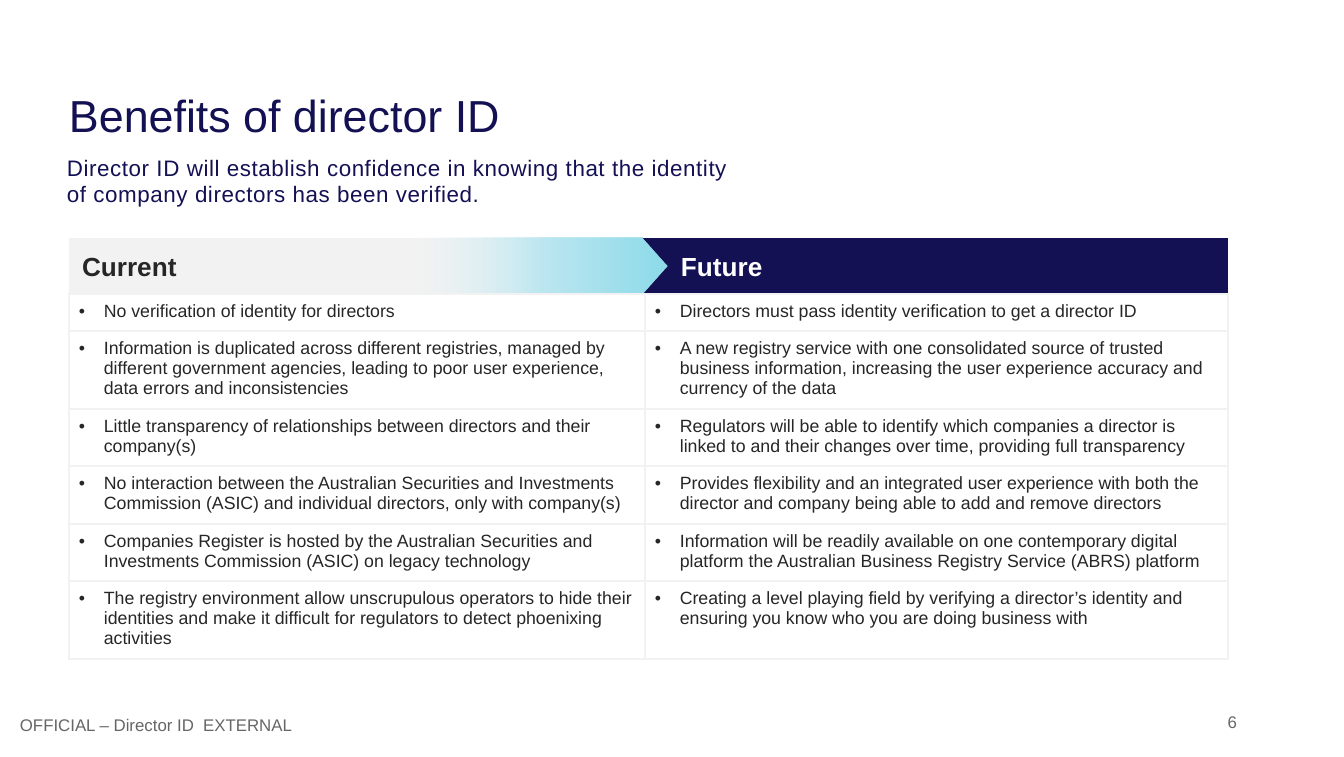
from lxml.etree import SubElement
from pptx import Presentation
from pptx.dml.color import RGBColor
from pptx.enum.shapes import MSO_SHAPE as Geo
from pptx.enum.text import MSO_ANCHOR as Anchor, PP_ALIGN as Align
from pptx.oxml import parse_xml
from pptx.oxml.ns import nsdecls, qn
from pptx.util import Emu, Inches, Pt

SCALE = 914400 / 134.4
FONT = "Arial"
HEX = {"navy": "131054", "ink": "262626", "grey": "666666", "pale": "F2F2F2",
       "white": "FFFFFF", "aqua": "8EDBEA", "sky": "BCE7F0", "mist": "DEF2F7"}

ROWS = [
    (37, "No verification of identity for directors",
     "Directors must pass identity verification to get a director ID"),
    (78, "Information is duplicated across different registries, managed by different "
         "government agencies, leading to poor user experience, data errors and inconsistencies",
     "A new registry service with one consolidated source of trusted business information, "
     "increasing the user experience accuracy and currency of the data"),
    (57, "Little transparency of relationships between directors and their company(s)",
     "Regulators will be able to identify which companies a director is linked to and "
     "their changes over time, providing full transparency"),
    (58, "No interaction between the Australian Securities and Investments Commission (ASIC) "
         "and individual directors, only with company(s)",
     "Provides flexibility and an integrated user experience with both the director and "
     "company being able to add and remove directors"),
    (57, "Companies Register is hosted by the Australian Securities and Investments "
         "Commission (ASIC) on legacy technology",
     "Information will be readily available on one contemporary digital platform the "
     "Australian Business Registry Service (ABRS) platform"),
    (78, "The registry environment allow unscrupulous operators to hide their identities and "
         "make it difficult for regulators to detect phoenixing activities",
     "Creating a level playing field by verifying a director’s identity and ensuring you "
     "know who you are doing business with"),
]


def px(n):
    return Emu(round(n * SCALE))


def tint(name):
    return RGBColor.from_string(HEX[name])


def write(para, text, size, color, bold=False, gap=0):
    """Add one run; gap is letter spacing in hundredths of a point."""
    run = para.add_run()
    run.text = text
    font = run.font
    font.name, font.size, font.bold = FONT, Pt(size), bold
    font.color.rgb = tint(color)
    if gap:
        font._element.set("spc", str(gap))


def pad(box, left=0, top=0, right=0, bottom=0):
    """Set the insets of a text frame or a table cell."""
    box.margin_left, box.margin_top = px(left), px(top)
    box.margin_right, box.margin_bottom = px(right), px(bottom)


def label(slide, x, y, w, h):
    """Add an empty, wrapped text box and return its first paragraph."""
    frame = slide.shapes.add_textbox(px(x), px(y), px(w), px(h)).text_frame
    frame.word_wrap = True
    frame.vertical_anchor = Anchor.MIDDLE
    pad(frame)
    return frame.paragraphs[0]


def heading(slide, x, y, w, h):
    title = slide.shapes.title
    title.left, title.top, title.width, title.height = px(x), px(y), px(w), px(h)
    frame = title.text_frame
    frame.vertical_anchor = Anchor.TOP
    pad(frame)
    para = frame.paragraphs[0]
    para.alignment = Align.LEFT
    para.line_spacing = Pt(30)
    para.space_before = Pt(0)
    write(para, "Benefits of director ID", 24, "navy")
    lead = label(slide, x - 2, y + 72, 676, 47)
    write(lead, "Director ID will establish confidence in knowing that the identity "
                "of company directors has been verified.", 12, "navy", gap=30)


def band(slide, geo, x, y, w, h, fill=None):
    shape = slide.shapes.add_shape(geo, px(x), px(y), px(w), px(h))
    shape.shadow.inherit = False
    shape.line.fill.background()
    if fill:
        shape.fill.solid()
        shape.fill.fore_color.rgb = tint(fill)
    return shape


def caption(shape, text, color, inset):
    frame = shape.text_frame
    frame.vertical_anchor = Anchor.MIDDLE
    pad(frame, left=inset)
    para = frame.paragraphs[0]
    para.alignment = Align.LEFT
    write(para, text, 14, color, bold=True)


def fade(shape):
    """Fill from aqua at the right to clear at the left."""
    stops = "".join(
        f'<a:gs pos="{pos}"><a:srgbClr val="{HEX[name]}">'
        f'<a:alpha val="{alpha}"/></a:srgbClr></a:gs>'
        for pos, name, alpha in ((1000, "aqua", 100000), (50000, "sky", 100000),
                                 (100000, "mist", 0)))
    fill = parse_xml(f'<a:gradFill {nsdecls("a")} rotWithShape="1"><a:gsLst>{stops}</a:gsLst>'
                     '<a:lin ang="10800000" scaled="0"/></a:gradFill>')
    shape._element.spPr.find(qn("a:prstGeom")).addnext(fill)


def header(slide, x, y, w, h):
    tip = x + 598
    future = band(slide, Geo.RECTANGLE, x + 570, y, w - 570, h, "navy")
    caption(future, "Future", "white", 42)
    now = band(slide, Geo.PENTAGON, x, y, tip - x, h, "pale")
    caption(now, "Current", "ink", 13)
    glow = band(slide, Geo.PENTAGON, tip - 247, y, 247, h)
    for arrow in (now, glow):
        arrow.adjustments[0] = 0.457
    fade(glow)


def border(cell):
    props = cell._tc.get_or_add_tcPr()
    for spot, side in enumerate("LRTB"):
        props.insert(spot, parse_xml(
            f'<a:ln{side} {nsdecls("a")} w="12700"><a:solidFill>'
            f'<a:srgbClr val="{HEX["pale"]}"/></a:solidFill></a:ln{side}>'))


def bullet(para):
    props = para._p.get_or_add_pPr()
    props.set("marL", str(px(25)))
    props.set("indent", str(-px(25)))
    SubElement(props, qn("a:buFont")).set("typeface", FONT)
    SubElement(props, qn("a:buChar")).set("char", "•")


def grid(slide, x, y, w, split):
    high = sum(row[0] for row in ROWS)
    table = slide.shapes.add_table(len(ROWS), 2, px(x), px(y), px(w), px(high)).table
    table.first_row = table.horz_banding = False
    for col, wide in zip(table.columns, (split, w - split)):
        col.width = px(wide)
    for row, (tall, *texts) in zip(table.rows, ROWS):
        row.height = px(tall)
        for cell, text in zip(row.cells, texts):
            cell.fill.background()
            border(cell)
            pad(cell, 10, 7, 10, 7)
            para = cell.text_frame.paragraphs[0]
            bullet(para)
            write(para, text, 9.5, "ink")


def footer(slide, x, y, w, h):
    mark = label(slide, x, y, 454, h)
    mark.line_spacing = Pt(13)
    write(mark, "OFFICIAL – Director ID", 9, "grey")
    write(mark, " ", 9, "grey", gap=250)
    write(mark, "EXTERNAL", 9, "grey")
    page = label(slide, x + w - 83, y, 83, h)
    page.alignment = Align.RIGHT
    write(page, "6", 9, "grey")


def main():
    deck = Presentation()
    deck.slide_width, deck.slide_height = Inches(10), Inches(5.63)
    slide = deck.slides.add_slide(deck.slide_layouts[5])
    heading(slide, 69, 85, 1130, 58)
    header(slide, 69, 238, 1159, 56)
    grid(slide, 69, 294, 1159, 576)
    footer(slide, 20, 702, 1217, 40)
    deck.save("out.pptx")


if __name__ == "__main__":
    main()
